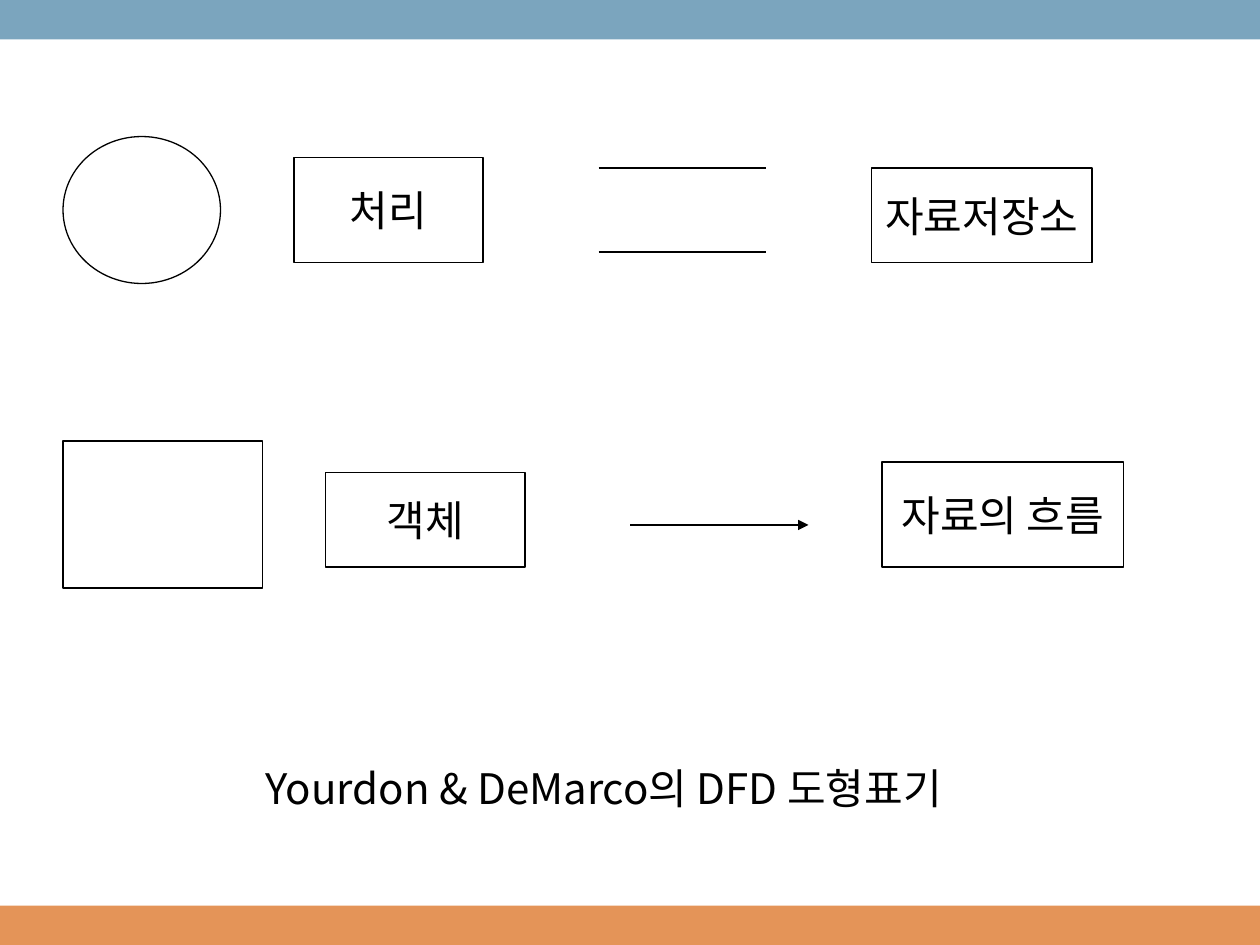
from dataclasses import dataclass

from lxml.etree import SubElement
from pptx import Presentation
from pptx.dml.color import RGBColor
from pptx.enum.shapes import MSO_CONNECTOR, MSO_SHAPE
from pptx.enum.text import MSO_ANCHOR, MSO_AUTO_SIZE, PP_ALIGN
from pptx.oxml.ns import qn
from pptx.util import Emu, Pt

PX = 9525  # EMU per px, 96 px to the inch
SLIDE_WIDTH, SLIDE_HEIGHT = 960, 720
BAND_HEIGHT = 30


@dataclass(frozen=True)
class Theme:
    paper: RGBColor = RGBColor(0xFF, 0xFF, 0xFF)
    ink: RGBColor = RGBColor(0x00, 0x00, 0x00)
    top_band: RGBColor = RGBColor(0x7B, 0xA5, 0xBE)
    bottom_band: RGBColor = RGBColor(0xE4, 0x94, 0x58)
    font: str = "Noto Sans CJK KR"
    text_size: Pt = Pt(24)
    line_width: Pt = Pt(0.75)


class Notation:
    """Draws diagram symbols on one slide in one theme."""

    def __init__(self, slide, theme):
        self.shapes = slide.shapes
        self.theme = theme

    def _emu(self, *lengths):
        return [Emu(length * PX) for length in lengths]

    def _write(self, frame, text):
        frame.word_wrap = False
        paragraph = frame.paragraphs[0]
        paragraph.text = text
        paragraph.alignment = PP_ALIGN.CENTER
        font = paragraph.font
        font.name = self.theme.font
        font.size = self.theme.text_size
        font.color.rgb = self.theme.ink
        # Hangul takes its typeface from the East Asian slot
        defaults = paragraph._p.pPr.find(qn("a:defRPr"))
        SubElement(defaults, qn("a:ea"), typeface=self.theme.font)

    def _solid(self, kind, box, fill):
        shape = self.shapes.add_shape(kind, *self._emu(*box))
        shape.shadow.inherit = False
        shape.fill.solid()
        shape.fill.fore_color.rgb = fill
        return shape

    def band(self, top, fill):
        box = (0, top, SLIDE_WIDTH, BAND_HEIGHT)
        self._solid(MSO_SHAPE.RECTANGLE, box, fill).line.fill.background()

    def symbol(self, kind, *box):
        shape = self._solid(kind, box, self.theme.paper)
        shape.line.color.rgb = self.theme.ink
        shape.line.width = self.theme.line_width
        return shape

    def label(self, text, *box):
        frame = self.symbol(MSO_SHAPE.RECTANGLE, *box).text_frame
        frame.vertical_anchor = MSO_ANCHOR.MIDDLE
        self._write(frame, text)

    def rule(self, left, right, y, arrow=False):
        line = self.shapes.add_connector(
            MSO_CONNECTOR.STRAIGHT, *self._emu(left, y, right, y))
        line.line.color.rgb = self.theme.ink
        line.line.width = self.theme.line_width
        if arrow:
            SubElement(line.line._get_or_add_ln(), qn("a:tailEnd"), type="triangle")
        SubElement(line._element.spPr, qn("a:effectLst"))

    def caption(self, text, *box):
        frame = self.shapes.add_textbox(*self._emu(*box)).text_frame
        self._write(frame, text)
        frame.auto_size = MSO_AUTO_SIZE.SHAPE_TO_FIT_TEXT


def main():
    theme = Theme()
    deck = Presentation()
    deck.slide_width = Emu(SLIDE_WIDTH * PX)
    deck.slide_height = Emu(SLIDE_HEIGHT * PX)
    blank_layout = deck.slide_layouts[6]
    notation = Notation(deck.slides.add_slide(blank_layout), theme)

    # Bands along the slide edges
    notation.band(SLIDE_HEIGHT - BAND_HEIGHT, theme.bottom_band)
    notation.band(0, theme.top_band)

    # Process
    notation.symbol(MSO_SHAPE.OVAL, 48, 104, 120, 112)
    notation.label("처리", 224, 120, 144, 80)

    # Data store
    for y in (128, 192):
        notation.rule(456, 584, y)
    notation.label("자료저장소", 664, 128, 168, 72)

    # Entity
    notation.symbol(MSO_SHAPE.RECTANGLE, 48, 336, 152, 112)
    notation.label("객체", 248, 360, 152, 72)

    # Data flow
    notation.rule(480, 616, 400, arrow=True)
    notation.label("자료의 흐름", 672, 352, 184, 80)

    # Caption
    notation.caption("Yourdon & DeMarco의 DFD 도형표기", 176, 576, 568, 48)

    deck.save("out.pptx")


if __name__ == "__main__":
    main()
